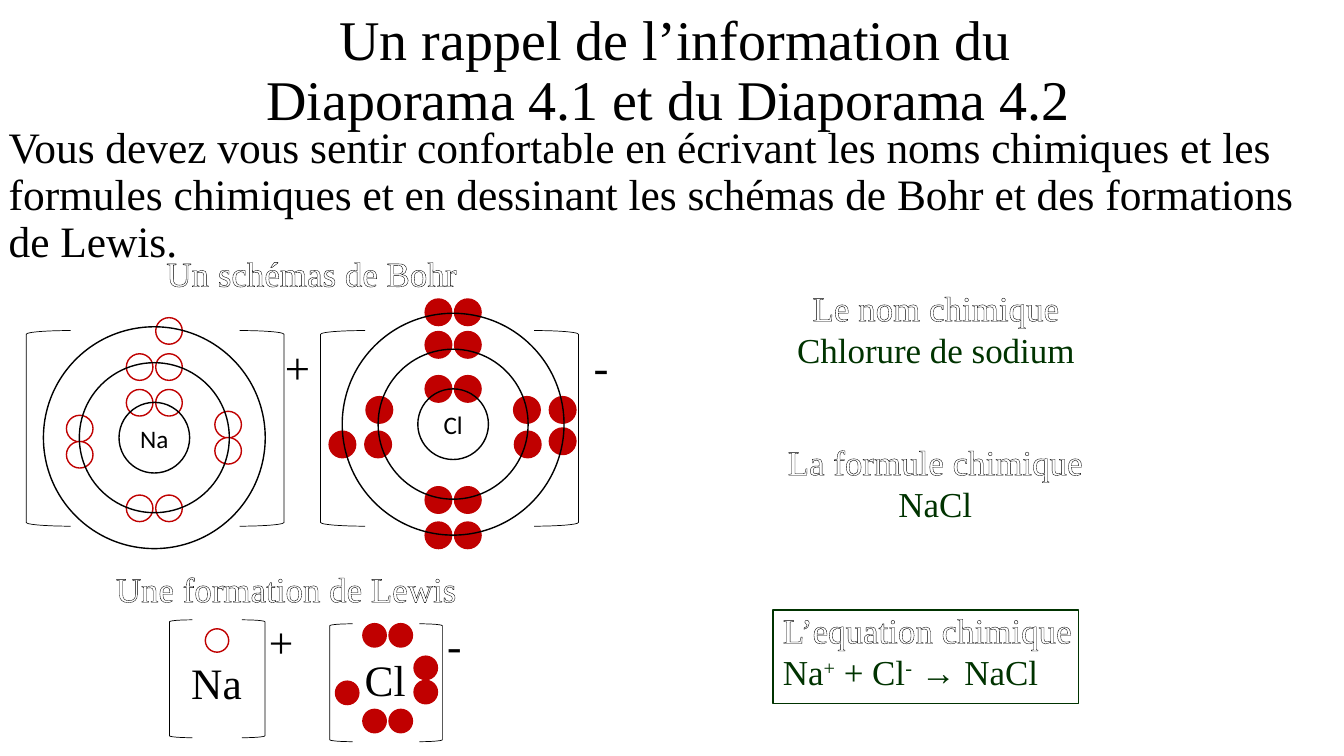
"""Build a review slide on Bohr diagrams, Lewis structures and formulas of NaCl."""
from lxml.etree import SubElement
from pptx import Presentation
from pptx.dml.color import RGBColor
from pptx.enum.shapes import MSO_SHAPE
from pptx.enum.text import MSO_ANCHOR, MSO_AUTO_SIZE, PP_ALIGN
from pptx.oxml.ns import qn
from pptx.util import Cm, Pt

BLACK = RGBColor(0, 0, 0)
WHITE = RGBColor(255, 255, 255)
RED = RGBColor(0xC0, 0, 0)
GREEN = RGBColor(0, 0x33, 0)
SERIF = "Times New Roman"
RING_DIAMETERS = (1.78, 3.78, 5.59)
PAIR = 0.37

SODIUM_ELECTRONS = [(PAIR, -2.69)] + [
    (x, y) for y in (-1.78, -0.88, 1.78) for x in (-PAIR, PAIR)
] + [(-1.88, -0.23), (-1.88, 0.43), (1.86, -0.33), (1.86, 0.33)]
CHLORINE_ELECTRONS = [
    (x, y) for y in (-2.82, -2, -0.89, 1.91, 2.8) for x in (-PAIR, PAIR)
] + [(-1.86, -0.36), (-1.89, 0.51), (-2.79, 0.51),
     (1.86, -0.36), (1.88, 0.51), (2.76, -0.36), (2.76, 0.43)]
LEWIS_CHLORINE = [(x, y) for y in (16.01, 18.17) for x in (9.44, 10.1)] + [
    (10.73, 16.83), (10.73, 17.44), (8.75, 17.46)]


def write(frame, paragraphs, size=25, font=SERIF, color=BLACK,
          align=PP_ALIGN.LEFT, spacing=None):
    """Fill a text frame with paragraphs made of (text, superscript) runs."""
    for index, runs in enumerate(paragraphs):
        paragraph = frame.paragraphs[0] if index == 0 else frame.add_paragraph()
        paragraph.alignment = align
        paragraph.line_spacing = spacing
        paragraph.space_before = Pt(0)
        for text, superscript in runs:
            for row, part in enumerate(text.split("\n")):
                if row:
                    paragraph.add_line_break()
                run = paragraph.add_run()
                run.text = part
                run.font.size, run.font.name = Pt(size), font
                run.font.color.rgb = color
                if superscript:
                    run.font._element.set("baseline", "30000")


def add_text(slide, box, *paragraphs, wrap=False, **style):
    """Add a text box and return its frame."""
    frame = slide.shapes.add_textbox(*map(Cm, box)).text_frame
    frame.word_wrap = wrap
    write(frame, paragraphs, **style)
    return frame


def plain(text):
    """Return a paragraph holding one run without superscript."""
    return [(text, False)]


def outline_heading(frame):
    """Give the first paragraph white letters with a thin black outline."""
    font = frame.paragraphs[0].runs[0].font
    font.color.rgb = WHITE
    properties = font._element
    line = SubElement(properties, qn("a:ln"), w=str(Pt(0.75)))
    fill = SubElement(line, qn("a:solidFill"))
    SubElement(fill, qn("a:srgbClr"), val=str(BLACK))
    properties.insert(0, line)


def add_heading(slide, box, heading, *details, align=PP_ALIGN.CENTER, wrap=False):
    """Add an outlined heading with green details under it."""
    frame = add_text(slide, box, plain(heading), *details,
                     color=GREEN, align=align, wrap=wrap)
    outline_heading(frame)


def add_outline(slide, kind, box, line=BLACK, width=1, fill=None):
    """Add a preset shape with a line and an optional fill."""
    shape = slide.shapes.add_shape(kind, *map(Cm, box))
    shape.shadow.inherit = False
    shape.line.color.rgb, shape.line.width = line, Pt(width)
    if fill is None:
        shape.fill.background()
    else:
        shape.fill.solid()
        shape.fill.fore_color.rgb = fill
    return shape


def add_circle(slide, x, y, diameter, **style):
    """Add a circle around a centre."""
    box = (x - diameter / 2, y - diameter / 2, diameter, diameter)
    add_outline(slide, MSO_SHAPE.OVAL, box, **style)


def add_bohr(slide, symbol, x, y, electrons, fill):
    """Add the electrons, the symbol and the shells of an atom."""
    for dx, dy in electrons:
        add_circle(slide, x + dx, y + dy, 0.67, line=RED, fill=fill)
    add_text(slide, (x - 0.8, y - 0.5, 1.6, 1.02), plain(symbol),
             size=18, font="Calibri", align=PP_ALIGN.CENTER)
    for diameter in RING_DIAMETERS:
        add_circle(slide, x, y, diameter)


def add_brackets(slide, left, right, top, width, height):
    """Add a pair of facing brackets between two outer edges."""
    for x, mirrored in ((left, False), (right - width, True)):
        bracket = add_outline(slide, MSO_SHAPE.LEFT_BRACKET,
                              (x, top, width, height), width=0.5)
        if mirrored:
            bracket._element.spPr.get_or_add_xfrm().set("flipH", "1")


def add_title(slide, text):
    """Place and format the title."""
    title = slide.shapes.title
    title.left, title.top, title.width, title.height = map(
        Cm, (0.58, 0.23, 32.87, 3.18))
    frame = title.text_frame
    frame.auto_size = MSO_AUTO_SIZE.NONE
    frame.vertical_anchor = MSO_ANCHOR.MIDDLE
    write(frame, [plain(text)], size=40, align=PP_ALIGN.CENTER, spacing=0.9)


def main():
    """Assemble and save the slide."""
    deck = Presentation()
    deck.slide_width, deck.slide_height = Cm(33.87), Cm(19.05)
    slide = deck.slides.add_slide(deck.slide_layouts[5])

    add_title(slide, "Un rappel de l’information du\nDiaporama 4.1 et du Diaporama 4.2 ")
    add_text(slide, (-0.03, 3.05, 33.91, 2.69), plain(
        "Vous devez vous sentir confortable en écrivant les noms chimiques et les "
        "formules chimiques et en dessinant les schémas de Bohr et des formations "
        "de Lewis."), size=31, spacing=0.9, wrap=True)

    add_heading(slide, (19.79, 7.09, 7.59, 2.39), "Le nom chimique",
                plain("Chlorure de sodium"))
    add_heading(slide, (19.48, 10.97, 8.18, 2.39), "La formule chimique",
                plain("NaCl"), wrap=True)
    add_outline(slide, MSO_SHAPE.RECTANGLE, (19.48, 15.37, 7.7, 2.36),
                line=GREEN, fill=WHITE)
    add_heading(slide, (19.48, 15.21, 7.9, 2.39), "L’equation chimique",
                [("Na", False), ("+", True), (" + Cl", False), ("-", True),
                 (" → NaCl", False)], align=PP_ALIGN.LEFT)

    add_heading(slide, (3.89, 6.22, 7.92, 1.32), "Un schémas de Bohr")
    add_bohr(slide, "Na", 3.89, 11.03, SODIUM_ELECTRONS, WHITE)
    add_bohr(slide, "Cl", 11.42, 10.69, CHLORINE_ELECTRONS, RED)
    for left in (0.66, 8.08):
        add_brackets(slide, left, left + 6.5, 8.33, 1.12, 4.93)

    add_heading(slide, (2.64, 14.17, 9.14, 1.32), "Une formation de Lewis", wrap=True)
    add_circle(slide, 5.47, 16.14, 0.59, line=RED, fill=WHITE)
    for x, y in LEWIS_CHLORINE:
        add_circle(slide, x, y, 0.59, line=RED, fill=RED)
    add_brackets(slide, 4.27, 6.68, 15.62, 0.58, 2.97)
    add_brackets(slide, 8.31, 11.15, 15.72, 0.58, 2.97)

    for text, box, size in (
        ("+", (6.93, 8.43, 1.14, 1.63), 32),
        ("-", (14.71, 8.41, 0.89, 1.63), 32),
        ("+", (6.53, 15.37, 1.14, 1.57), 31),
        ("-", (11.02, 15.44, 0.89, 1.57), 31),
        ("Na", (4.57, 16.41, 1.8, 1.57), 31),
        ("Cl", (8.94, 16.33, 1.55, 1.57), 31),
    ):
        add_text(slide, box, plain(text), size=size)

    deck.save("out.pptx")


if __name__ == "__main__":
    main()
